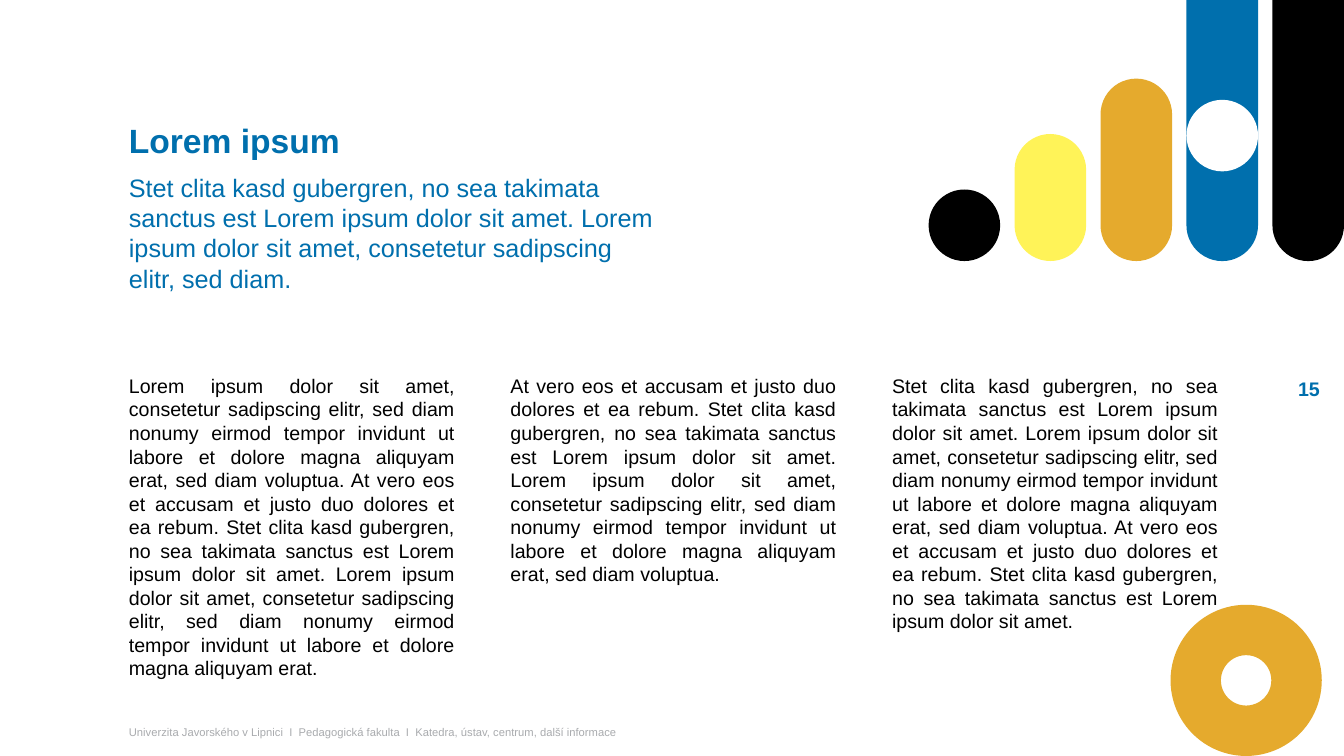
from dataclasses import dataclass
from typing import NamedTuple

from pptx import Presentation
from pptx import util as u
from pptx.dml.color import RGBColor
from pptx.enum import shapes, text


@dataclass(frozen=True)
class Theme:
    """Colours, font and type sizes of the slide."""
    font: str = "Arial"
    blue: str = "006FAD"
    black: str = "000000"
    gold: str = "E5AA2D"
    yellow: str = "FFF358"
    white: str = "FFFFFF"
    grey: str = "A9ABAE"
    title: int = 24
    lead: int = 18
    body: int = 14
    footer: int = 8


class Box(NamedTuple):
    """A rectangle in inches."""
    left: float
    top: float
    width: float
    height: float


THEME = Theme()
LEFT = 1.18
SLIDE = Box(0, 0, 13.33, 7.5)
SHAPE = shapes.MSO_SHAPE

TITLE = "Lorem ipsum"
LEAD = (
    "Stet clita kasd gubergren, no sea takimata sanctus est Lorem ipsum dolor sit amet. "
    "Lorem ipsum dolor sit amet, consetetur sadipscing elitr, sed diam."
)
LOREM = (
    "Lorem ipsum dolor sit amet, consetetur sadipscing elitr, sed diam nonumy eirmod "
    "tempor invidunt ut labore et dolore magna aliquyam erat"
)
VERO = "At vero eos et accusam et justo duo dolores et ea rebum."
STET = (
    "Stet clita kasd gubergren, no sea takimata sanctus est Lorem ipsum dolor sit amet."
)
COLUMNS = (
    f"{LOREM}, sed diam voluptua. {VERO} {STET} {LOREM}.",
    f"{VERO} {STET} {LOREM}, sed diam voluptua.",
    f"{STET} {LOREM}, sed diam voluptua. {VERO} {STET}",
)
FOOTER = (
    "Univerzita Javorského v Lipnici  I  Pedagogická fakulta  I  "
    "Katedra, ústav, centrum, další informace"
)


def add_text(page, box, content, *, size, color=THEME.black, bold=False,
             align=text.PP_ALIGN.LEFT, anchor=text.MSO_ANCHOR.TOP,
             line=1.0, before=0, wrap=True):
    """Add a text box with one formatted paragraph."""
    frame = page.shapes.add_textbox(*map(u.Inches, box)).text_frame
    frame.word_wrap = wrap
    frame.auto_size = text.MSO_AUTO_SIZE.SHAPE_TO_FIT_TEXT
    frame.vertical_anchor = anchor
    para = frame.paragraphs[0]
    para.alignment = align
    para.line_spacing = line
    para.space_before = u.Pt(before)
    span = para.add_run()
    span.text = content
    span.font.name = THEME.font
    span.font.size = u.Pt(size)
    span.font.bold = bold
    span.font.color.rgb = RGBColor.from_string(color)


def add_form(parent, kind, box, color, adjustments=()):
    """Add a flat preset shape without a line."""
    form = parent.shapes.add_shape(kind, *map(u.Inches, box))
    form.shadow.inherit = False
    form.fill.solid()
    form.fill.fore_color.rgb = RGBColor.from_string(color)
    form.line.fill.background()
    for index, value in enumerate(adjustments):
        form.adjustments[index] = value


def add_heading(page, box):
    """Place the title above its lead text."""
    title_height = 0.46
    lead_offset = 0.47
    add_text(page, box._replace(height=title_height), TITLE,
             size=THEME.title, color=THEME.blue, bold=True, line=0.9)
    lead = box._replace(top=box.top + lead_offset, height=box.height - lead_offset)
    add_text(page, lead, LEAD, size=THEME.lead, color=THEME.blue, before=3)


def add_columns(page, box):
    """Spread the justified text columns evenly over the box."""
    width = 3.43
    pitch = (box.width - width) / (len(COLUMNS) - 1)
    for index, content in enumerate(COLUMNS):
        column = box._replace(left=box.left + index * pitch, width=width)
        add_text(page, column, content, size=THEME.body,
                 align=text.PP_ALIGN.JUSTIFY, before=3)


def add_bars(page, box):
    """Stand the rounded bars on the bottom of the box."""
    width = 0.71
    group = page.shapes.add_group_shape()
    bars = (
        (SHAPE.OVAL, width, THEME.black, ()),
        (SHAPE.ROUNDED_RECTANGLE, 1.26, THEME.yellow, (0.5,)),
        (SHAPE.ROUNDED_RECTANGLE, 1.81, THEME.gold, (0.5,)),
        (SHAPE.ROUND_2_SAME_RECTANGLE, box.height, THEME.blue, (0, 0.5)),
        (SHAPE.ROUND_2_SAME_RECTANGLE, box.height, THEME.black, (0, 0.5)),
    )
    pitch = (box.width - width) / (len(bars) - 1)
    for index, (kind, height, color, adjustments) in enumerate(bars):
        bar = Box(box.left + index * pitch, box.top + box.height - height,
                  width, height)
        add_form(group, kind, bar, color, adjustments)
    dot = Box(box.left + 3 * pitch, box.top + 0.99, width, width)
    add_form(group, SHAPE.OVAL, dot, THEME.white)


def build_columns_slide(page, box):
    """Place all regions of the three-column slide."""
    right = box.left + box.width
    bottom = box.top + box.height
    add_text(page, Box(LEFT, bottom - 0.36, 5.49, 0.24), FOOTER,
             size=THEME.footer, color=THEME.grey, anchor=text.MSO_ANCHOR.MIDDLE)
    add_text(page, Box(right - 0.58, 3.69, 0.44, 0.34), "15",
             size=THEME.body, color=THEME.blue, bold=True,
             align=text.PP_ALIGN.RIGHT, anchor=text.MSO_ANCHOR.MIDDLE, wrap=False)
    add_columns(page, Box(LEFT, 3.66, 11, 3.16))
    add_heading(page, Box(LEFT, 1.19, 5.49, 1.78))
    add_form(page, SHAPE.DONUT, Box(right - 1.72, bottom - 1.5, 1.5, 1.5),
             THEME.gold, (1 / 3,))
    add_bars(page, Box(right - 4.12, box.top, 4.12, 2.59))


def main():
    """Build and save the deck."""
    deck = Presentation()
    deck.slide_width = u.Inches(SLIDE.width)
    deck.slide_height = u.Inches(SLIDE.height)
    page = deck.slides.add_slide(deck.slide_layouts[6])
    build_columns_slide(page, SLIDE)
    deck.save("out.pptx")


if __name__ == "__main__":
    main()
